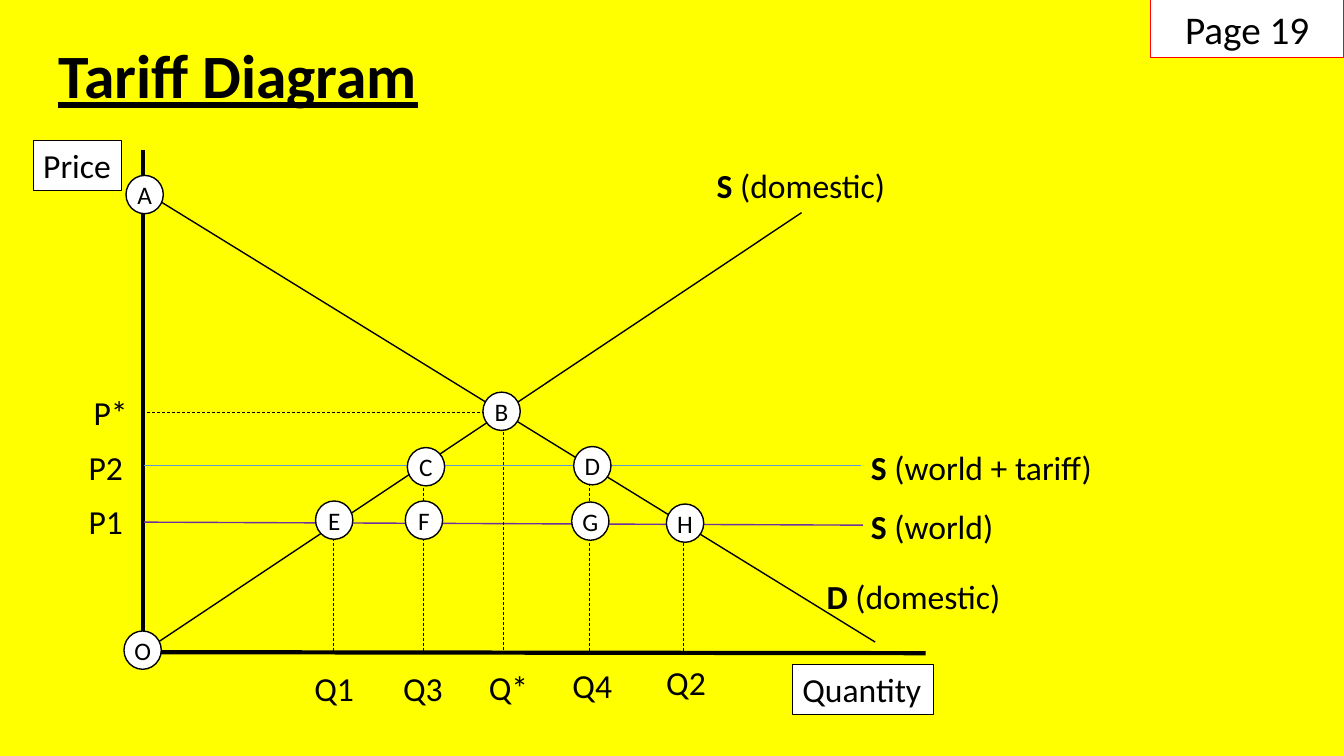
from pptx import Presentation
from pptx.dml.color import RGBColor
from pptx.enum.dml import MSO_LINE
from pptx.enum.shapes import MSO_CONNECTOR, MSO_SHAPE
from pptx.enum.text import MSO_ANCHOR, MSO_AUTO_SIZE, PP_ALIGN
from pptx.oxml.ns import qn
from pptx.util import Pt
from lxml import etree

PX = 9144
FONT = "Calibri"
BLACK, WHITE, YELLOW, RED = "000000", "FFFFFF", "FFFF00", "FF0000"
PURPLE, BLUE = "7030A0", "5B9BD5"
DASH = MSO_LINE.DASH
STRAIGHT = MSO_CONNECTOR.STRAIGHT
RECTANGLE, OVAL = MSO_SHAPE.RECTANGLE, MSO_SHAPE.OVAL
MIDDLE, TOP = MSO_ANCHOR.MIDDLE, MSO_ANCHOR.TOP
LEFT, CENTER = PP_ALIGN.LEFT, PP_ALIGN.CENTER
FIT_SHAPE = MSO_AUTO_SIZE.SHAPE_TO_FIT_TEXT

AXIS_X, AXIS_Y = 142, 647
LABEL_HEIGHT = 50
MARKER_WIDTH, MARKER_HEIGHT = 37, 38

SOLID_LINES = [
    ((AXIS_X, 149), (AXIS_X, 648), BLACK, 3),
    ((918, 648), (AXIS_X, AXIS_Y), BLACK, 3),
    ((AXIS_X, AXIS_Y), (795, 211), BLACK, 1),
    ((868, 637), (143, 190), BLACK, 1),
    ((856, 521), (143, 518), PURPLE, 1),
    ((143, 462), (854, 462), BLUE, 1),
]
DROP_LINES = [(499, 409), (678, 524), (331, 524), (585, 464), (420, 464)]
CURVE_LABELS = [
    ("S", " (domestic)", 701, 159, 188),
    ("D", " (domestic)", 810, 566, 194),
    ("S", " (world)", 854, 497, 143),
    ("S", " (world + tariff)", 854, 438, 242),
]
AXIS_LABELS = [
    ("P*", 83, 384, 54), ("P2", 78, 438, 55), ("P1", 78, 492, 55),
    ("Q1", 302, 658, 60), ("Q3", 390, 658, 60), ("Q*", 475, 657, 60),
    ("Q4", 558, 655, 60), ("Q2", 651, 652, 60),
]
MARKERS = [
    ("A", 125, 174), ("B", 479, 389), ("C", 404, 444), ("D", 569, 443),
    ("E", 313, 497), ("F", 402, 497), ("G", 567, 498), ("H", 661, 500),
    ("O", 123, 626),
]


def rgb(value):
    """Turn a hex string into a colour."""
    return RGBColor.from_string(value)


def emu(*lengths):
    """Turn px lengths into EMU."""
    return [length * PX for length in lengths]


def style_font(font, size):
    """Set the common typeface, size and colour."""
    font.name = FONT
    font.size = Pt(size)
    font.color.rgb = rgb(BLACK)


def add_line(slide, start, end, color, width, dash=None):
    """Draw a straight line between two points."""
    line = slide.shapes.add_connector(STRAIGHT, *emu(*start, *end))
    line.line.color.rgb = rgb(color)
    line.line.width = Pt(width)
    if dash:
        line.line.dash_style = dash
    etree.SubElement(line._element.spPr, qn("a:effectLst"))


def add_panel(slide, preset, box, text, size, outline=BLACK, width=0.75,
              align=LEFT, anchor=TOP):
    """Draw a white outlined shape holding one line of text."""
    panel = slide.shapes.add_shape(preset, *emu(*box))
    panel.shadow.inherit = False
    panel.fill.solid()
    panel.fill.fore_color.rgb = rgb(WHITE)
    panel.line.color.rgb = rgb(outline)
    panel.line.width = Pt(width)
    frame = panel.text_frame
    frame.word_wrap = False
    frame.vertical_anchor = anchor
    paragraph = frame.paragraphs[0]
    paragraph.text = text
    paragraph.alignment = align
    style_font(paragraph.font, size)
    return frame


def add_label(slide, text, left, top, width, bold_part=""):
    """Write a diagram label, with an optional bold beginning."""
    label = slide.shapes.add_textbox(*emu(left, top, width, LABEL_HEIGHT))
    label.text_frame.word_wrap = False
    label.text_frame.auto_size = FIT_SHAPE
    paragraph = label.text_frame.paragraphs[0]
    if bold_part:
        symbol = paragraph.add_run()
        symbol.text = bold_part
        symbol.font.bold = True
    paragraph.add_run().text = text
    style_font(paragraph.font, 24)


def add_marker(slide, letter, left, top):
    """Draw a lettered circle at a point of the diagram."""
    box = (left, top, MARKER_WIDTH, MARKER_HEIGHT)
    frame = add_panel(slide, OVAL, box, letter, 18, width=1,
                      align=CENTER, anchor=MIDDLE)
    frame.margin_left = frame.margin_right = 0
    frame.margin_top = frame.margin_bottom = 0


def add_title(slide, text):
    """Write the underlined slide title."""
    title = slide.shapes.add_textbox(*emu(48, 28, 468, 100))
    title.text_frame.word_wrap = True
    title.text_frame.vertical_anchor = MIDDLE
    paragraph = title.text_frame.paragraphs[0]
    paragraph.text = text
    paragraph.line_spacing = 0.9
    style_font(paragraph.font, 44)
    paragraph.font.bold = True
    paragraph.font.underline = True


def main():
    """Build the tariff diagram slide."""
    deck = Presentation()
    deck.slide_width, deck.slide_height = emu(1333, 750)
    slide = deck.slides.add_slide(deck.slide_layouts[6])
    slide.background.fill.solid()
    slide.background.fill.fore_color.rgb = rgb(YELLOW)

    add_title(slide, "Tariff Diagram")
    add_panel(slide, RECTANGLE, (1141, 0, 192, 57), "Page 19", 28,
              outline=RED, align=CENTER)
    for start, end, color, width in SOLID_LINES:
        add_line(slide, start, end, color, width)
    for x, top in DROP_LINES:
        add_line(slide, (x, top), (x, AXIS_Y), BLACK, 0.5, DASH)
    add_line(slide, (501, 409), (AXIS_X, 409), BLACK, 0.5, DASH)
    add_panel(slide, RECTANGLE, (33, 139, 88, LABEL_HEIGHT), "Price", 24)
    add_panel(slide, RECTANGLE, (786, 659, 140, LABEL_HEIGHT), "Quantity", 24)
    for symbol, scope, left, top, width in CURVE_LABELS:
        add_label(slide, scope, left, top, width, symbol)
    for text, left, top, width in AXIS_LABELS:
        add_label(slide, text, left, top, width)
    for letter, left, top in MARKERS:
        add_marker(slide, letter, left, top)

    deck.save("out.pptx")


if __name__ == "__main__":
    main()
